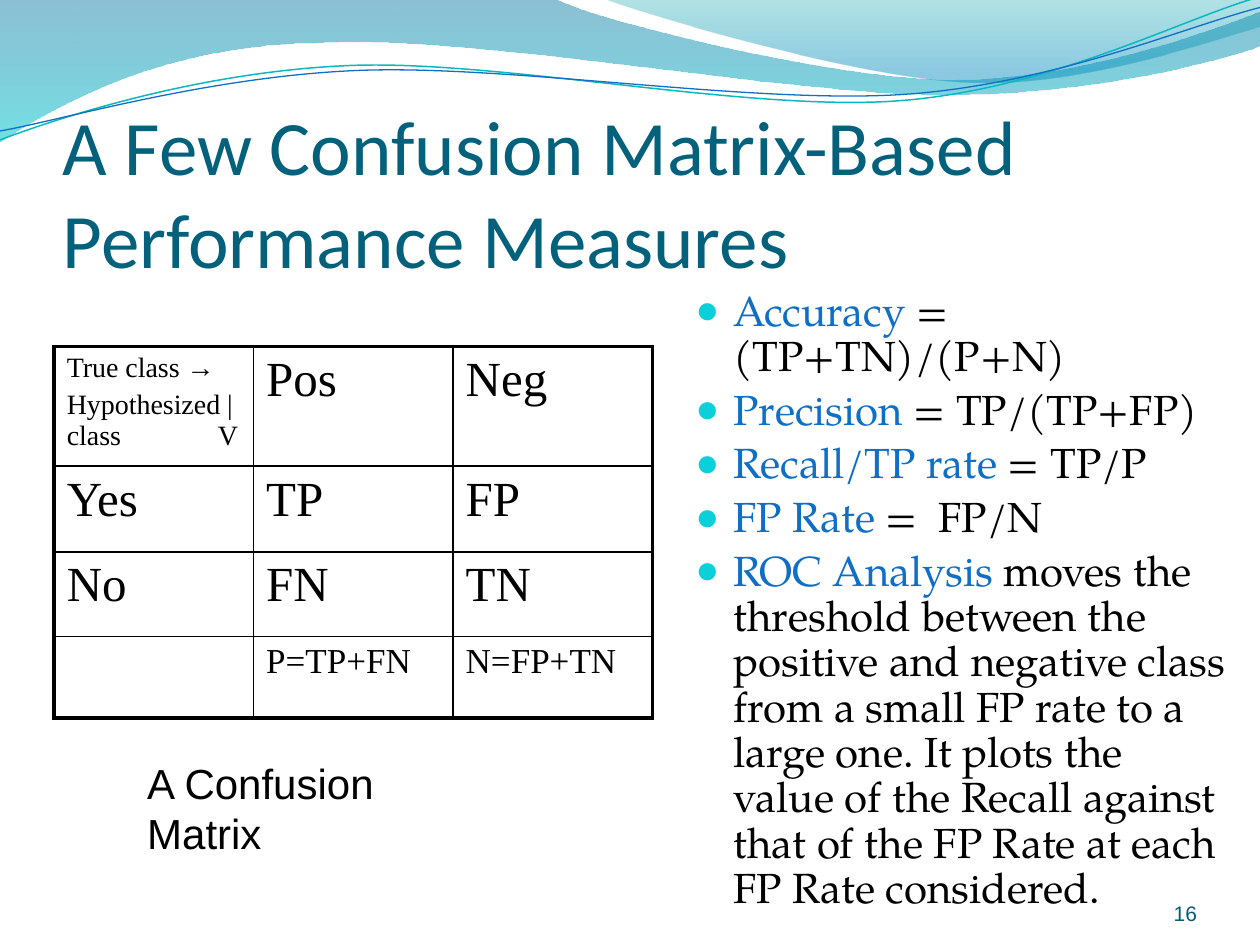
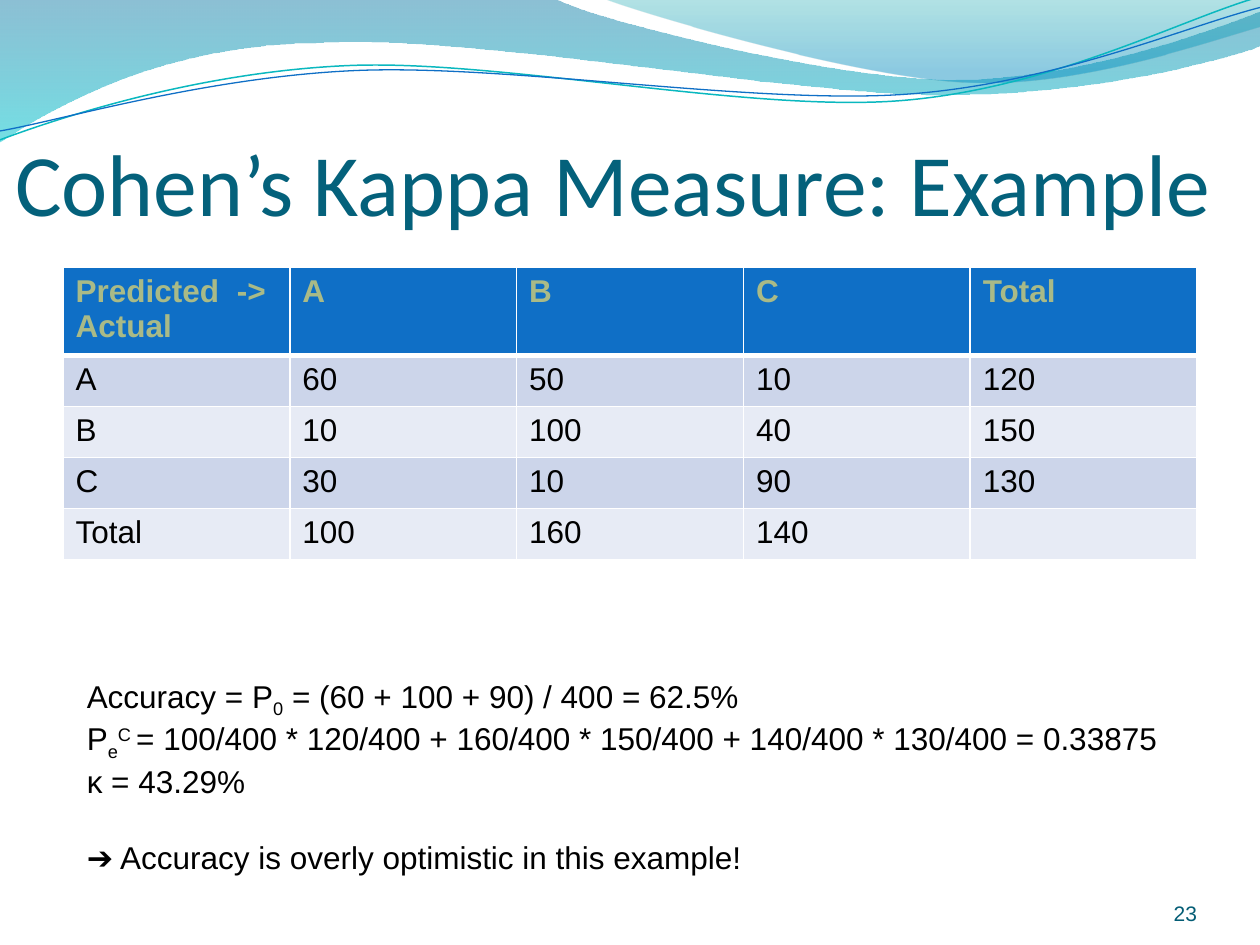
from math import cos, radians, sin

from lxml.etree import SubElement
from pptx import Presentation
from pptx.dml.color import RGBColor
from pptx.enum.text import MSO_ANCHOR, PP_ALIGN
from pptx.oxml.ns import qn
from pptx.util import Inches, Pt

COLORS = {
    "title": "04617B", "number": "045D75", "text": "000000", "term": "0F6FC6",
    "bullet": "0BD0D9", "olive": "A9BA87", "white": "FFFFFF",
    "header": "0F6FC6", "band_dark": "CCD5EA", "band_light": "E7EBF5",
    "wave_teal": "0AB8BF", "wave_blue": "0F6FC6",
    "steel": "0074A1", "aqua": "00C6CF", "lagoon": "00A1A9", "sky": "008BBF",
}
BODY_INSETS = (0.1, 0.05, 0.1, 0.05)
WAVE_TILT = -2.7

# Bands: start point, then lines (one point) and Bezier curves (three points);
# gradient stops are position, colour, opacity in percent
BANDS = [
    ((0, -0.01),
     [[(4.4, -0.01)],
      [(4.76, 0.17), (6.64, 0.63), (7.58, 0.63)],
      [(8.53, 0.63), (9.58, 0.26), (10, 0.09)],
      [(10.01, 0.36)],
      [(9.83, 0.44), (8.7, 0.76), (7.46, 0.75)],
      [(6.22, 0.75), (3.82, 0.28), (2.57, 0.34)],
      [(1.29, 0.35), (0.46, 0.83), (-0.01, 1.13)],
      [(0, -0.01)]],
     [(0, "steel", 45), (100, "aqua", 55)]),
    ((4.79, -0.01),
     [[(5.09, 0.11), (6.82, 0.62), (7.69, 0.65)],
      [(8.56, 0.69), (9.61, 0.32), (10, 0.21)],
      [(10, 0)],
      [(4.79, -0.01)]],
     [(0, "lagoon", 30), (80, "sky", 45)]),
]
# Wave lines: start point, curves, centre of the tilt, colour, width
WAVE_LINES = [
    ((0, 1.11),
     [[(0.48, 0.93), (1.58, 0.57), (2.77, 0.52)],
      [(3.95, 0.47), (5.93, 0.89), (7.13, 0.8)],
      [(8.33, 0.71), (9.38, 0.15), (9.98, -0.02)]],
     (4.99, 0.58), "wave_teal", 0.85),
    ((0, 1.04),
     [[(0.47, 0.96), (1.64, 0.61), (2.83, 0.56)],
      [(4.03, 0.51), (5.97, 0.83), (7.17, 0.75)],
      [(8.36, 0.67), (9.41, 0.21), (10, 0.06)]],
     (5, 0.59), "wave_blue", 0.75),
]


def rgb(name):
    return RGBColor.from_string(COLORS[name])


# Outlines
def turn(point, center, degrees):
    x, y = point[0] - center[0], point[1] - center[1]
    angle = radians(degrees)
    return (center[0] + x * cos(angle) - y * sin(angle),
            center[1] + x * sin(angle) + y * cos(angle))


def add_outline(slide, start, segments, close):
    corners = [(Inches(x), Inches(y)) for x, y in [start, *sum(segments, [])]]
    builder = slide.shapes.build_freeform(*corners[0])
    builder.add_line_segments(corners[1:], close=close)
    shape = builder.convert_to_shape()
    shape.shadow.inherit = False
    # Turn each run of three points into one curve
    steps = iter(list(shape.element.spPr.iter(qn("a:lnTo"))))
    for segment in segments:
        first, *others = [next(steps) for _ in segment]
        if others:
            first.tag = qn("a:cubicBezTo")
            for other in others:
                first.append(other[0])
                other.getparent().remove(other)
    return shape


def set_gradient(shape, stops):
    shape.fill.gradient()
    shape.fill.gradient_angle = 270
    stop_list = shape.element.spPr.find(qn("a:gradFill")).find(qn("a:gsLst"))
    for old_stop in list(stop_list):
        stop_list.remove(old_stop)
    for position, color, opacity in stops:
        stop = SubElement(stop_list, qn("a:gs"), pos=str(position * 1000))
        fill = SubElement(stop, qn("a:srgbClr"), val=COLORS[color])
        SubElement(fill, qn("a:alpha"), val=str(opacity * 1000))


def add_waves(slide):
    for start, segments, stops in BANDS:
        band = add_outline(slide, start, segments, True)
        set_gradient(band, stops)
        band.line.fill.background()
    for start, segments, center, color, width in WAVE_LINES:
        level = [[turn(point, center, -WAVE_TILT) for point in segment] for segment in segments]
        line = add_outline(slide, turn(start, center, -WAVE_TILT), level, False)
        line.rotation = WAVE_TILT
        line.fill.background()
        line.line.color.rgb = rgb(color)
        line.line.width = Pt(width)


# Text
def style_paragraph(paragraph, size, font, color, bold=False):
    paragraph.font.size = Pt(size)
    paragraph.font.name = font
    paragraph.font.bold = bold
    if color:
        paragraph.font.color.rgb = rgb(color)


def add_text(slide, box, lines, size, font, color, insets=BODY_INSETS, anchor=MSO_ANCHOR.TOP):
    """Each line is a list of runs; returns the paragraphs."""
    frame = slide.shapes.add_textbox(*map(Inches, box)).text_frame
    frame.word_wrap = True
    frame.vertical_anchor = anchor
    (frame.margin_left, frame.margin_top,
     frame.margin_right, frame.margin_bottom) = map(Inches, insets)
    for index, runs in enumerate(lines):
        paragraph = frame.add_paragraph() if index else frame.paragraphs[0]
        style_paragraph(paragraph, size, font, color)
        for text in runs:
            paragraph.add_run().text = text
    return frame.paragraphs


def add_slide(presentation, title, title_box, title_size, number):
    slide = presentation.slides.add_slide(presentation.slide_layouts[6])
    add_waves(slide)
    add_text(slide, title_box, [[title]], title_size, "Calibri", "title",
             (0, 0.05, 0, 0), MSO_ANCHOR.BOTTOM)
    paragraphs = add_text(slide, (8.67, 6.95, 0.83, 0.4), [[number]], 12, "Arial", "number",
                          (0, 0, 0, 0), MSO_ANCHOR.BOTTOM)
    paragraphs[0].alignment = PP_ALIGN.RIGHT
    return slide


def add_tab_stop(paragraph, position):
    tabs = SubElement(paragraph._p.get_or_add_pPr(), qn("a:tabLst"))
    SubElement(tabs, qn("a:tab"), pos=str(Inches(position)), algn="l")


# Tables
def set_borders(cell, color, widths):
    """Widths run left, right, top, bottom."""
    properties = cell._tc.get_or_add_tcPr()
    for side, width in zip("LRTB", widths):
        line = SubElement(properties, qn(f"a:ln{side}"), w=str(Pt(width)))
        fill = SubElement(line, qn("a:solidFill"))
        SubElement(fill, qn("a:srgbClr"), val=COLORS[color])


def add_grid(slide, box, rows, heights):
    table = slide.shapes.add_table(len(rows), len(rows[0]), *map(Inches, box)).table
    table.first_row = table.horz_banding = False
    for column in table.columns:
        column.width = Inches(box[2] / len(rows[0]))
    for row, height, texts in zip(table.rows, heights, rows):
        row.height = Inches(height)
        for cell, text in zip(row.cells, texts):
            cell.text = text
    return table


def add_confusion_matrix(slide, box):
    rows = [["True class →\nHypothesized | class\tV", "Pos", "Neg"],
            ["Yes", "TP", "FP"],
            ["No", "FN", "TN"],
            ["", "P=TP+FN", "N=FP+TN"]]
    table = add_grid(slide, box, rows, [0.95, 0.68, 0.67, 0.65])
    last_row, last_column = len(rows) - 1, len(rows[0]) - 1
    for r, row in enumerate(table.rows):
        for c, cell in enumerate(row.cells):
            outer = (c == 0, c == last_column, r == 0, r == last_row)
            set_borders(cell, "text", [2.25 if edge else 1 for edge in outer])
            cell.fill.background()
            size = 16 if r == c == 0 else 20 if r == last_row else 28
            for paragraph in cell.text_frame.paragraphs:
                style_paragraph(paragraph, size, "Times New Roman", "text")
    hypothesized = table.cell(0, 0).text_frame.paragraphs[1]
    hypothesized.space_before = Pt(3)
    add_tab_stop(hypothesized, 1.2)


def add_kappa_table(slide, box):
    rows = [["Predicted\t->\nActual", "A", "B", "C", "Total"],
            ["A", "60", "50", "10", "120"],
            ["B", "10", "100", "40", "150"],
            ["C", "30", "10", "90", "130"],
            ["Total", "100", "160", "140", ""]]
    table = add_grid(slide, box, rows, [0.7] + [0.405] * 4)
    for r, row in enumerate(table.rows):
        fill = "header" if r == 0 else "band_dark" if r % 2 else "band_light"
        for cell in row.cells:
            set_borders(cell, "white", (1, 1, 3 if r == 1 else 1, 3 if r == 0 else 1))
            cell.fill.solid()
            cell.fill.fore_color.rgb = rgb(fill)
            for paragraph in cell.text_frame.paragraphs:
                style_paragraph(paragraph, 18, "Arial", "text" if r else "olive", r == 0)
    add_tab_stop(table.cell(0, 0).text_frame.paragraphs[0], 1.28)


# Body regions
def add_measures(slide, box):
    measures = [
        ["Accuracy", " = (TP+TN)/(P+N)"],
        ["Precision ", "= TP/(TP+FP)"],
        ["Recall/TP rate ", "= TP/P"],
        ["FP Rate ", "= ", "FP/N"],
        ["ROC Analysis ",
         "moves the threshold between the positive and negative class from a small FP rate "
         "to a large one. It plots the value of the Recall against that of the FP Rate at "
         "each FP Rate considered."],
    ]
    paragraphs = add_text(slide, box, measures, 24, "TeX Gyre Pagella", None)
    for index, paragraph in enumerate(paragraphs):
        paragraph.line_spacing = 0.9
        paragraph.space_before = Pt(4.8 if index else 0)
        term, *definition = paragraph.runs
        term.font.color.rgb = rgb("term")
        for run in definition:
            run.font.color.rgb = rgb("text")
        properties = paragraph._p.get_or_add_pPr()
        properties.set("marL", str(Inches(0.3)))
        properties.set("indent", str(Inches(-0.3)))
        bullet_color = SubElement(properties, qn("a:buClr"))
        SubElement(bullet_color, qn("a:srgbClr"), val=COLORS["bullet"])
        SubElement(properties, qn("a:buSzPct"), val="95000")
        SubElement(properties, qn("a:buFont"), typeface="Arial")
        SubElement(properties, qn("a:buChar"), char="●")
    # Wider gap after the equals sign of the FP rate
    paragraphs[3].runs[1]._r.get_or_add_rPr().set("spc", "300")


def add_kappa_steps(slide, box):
    steps = [
        ["Accuracy = P", "0", " = (60 + 100 + 90) / 400 = 62.5%"],
        ["P", "e", "C ",
         "= 100/400 * 120/400 + 160/400 * 150/400 + 140/400 * 130/400 = 0.33875"],
        ["κ = 43.29%"],
        ["➔ Accuracy is overly optimistic in this example!"],
    ]
    paragraphs = add_text(slide, box, steps, 18, "Arial", "text")
    for line, run, baseline in [(0, 1, -25), (1, 1, -25), (1, 2, 30)]:
        properties = paragraphs[line].runs[run]._r.get_or_add_rPr()
        properties.set("baseline", str(baseline * 1000))
    paragraphs[-1].space_before = Pt(21.6)


# Slides
def build_measures_slide(presentation):
    slide = add_slide(presentation, "A Few Confusion Matrix-Based Performance Measures",
                      (0.5, 1, 9, 1.25), 44, "16")
    add_confusion_matrix(slide, (0.43, 2.75, 4.75, 2.95))
    add_measures(slide, (5.42, 2.25, 4.42, 4.95))
    add_text(slide, (1.07, 5.96, 2.9, 0.5), [["A Confusion Matrix"]], 24, "Arial", "text")


def build_kappa_slide(presentation):
    slide = add_slide(presentation, "Cohen’s Kappa Measure: Example",
                      (0.12, 0.77, 9.88, 1.09), 50, "23")
    add_kappa_table(slide, (0.5, 2.12, 9, 2.32))
    add_kappa_steps(slide, (0.59, 5.32, 8.81, 1.62))


def main():
    presentation = Presentation()
    presentation.slide_width = Inches(10)
    presentation.slide_height = Inches(7.5)
    build_measures_slide(presentation)
    build_kappa_slide(presentation)
    presentation.save("out.pptx")


if __name__ == "__main__":
    main()
